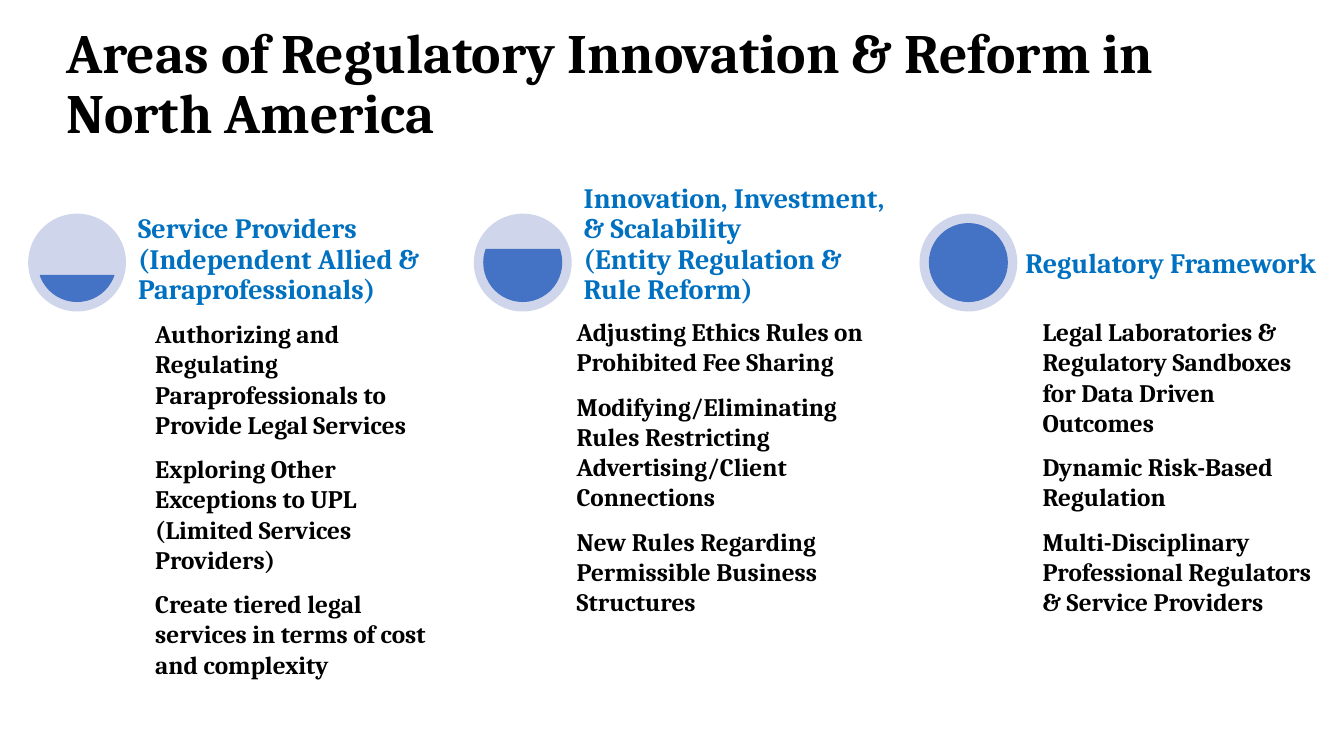
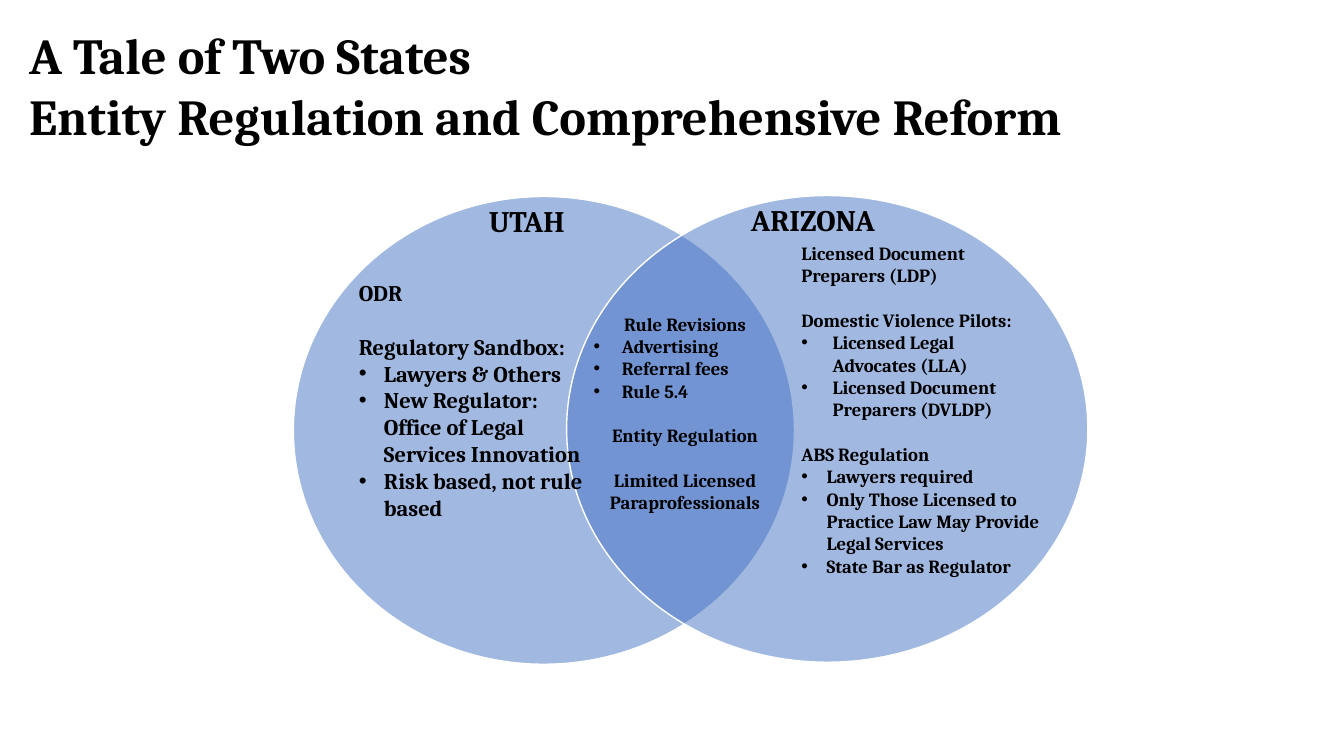
from copy import deepcopy
from dataclasses import dataclass
from math import asin, degrees

from pptx import Presentation
from pptx import util as u
from pptx.dml.color import RGBColor
from pptx.enum import shapes, text
from pptx.oxml.ns import qn
from lxml import etree

BLACK = RGBColor(0x00, 0x00, 0x00)
WHITE = RGBColor(0xFF, 0xFF, 0xFF)
BLUE = RGBColor(0x44, 0x72, 0xC4)
PALE_BLUE = RGBColor(0xCF, 0xD5, 0xEA)
HEADING_BLUE = RGBColor(0x00, 0x70, 0xC0)
FONT = "Cambria"
CENTER = text.PP_ALIGN.CENTER
BOTTOM = text.MSO_ANCHOR.BOTTOM
MIDDLE = text.MSO_ANCHOR.MIDDLE


@dataclass
class Item:
    """One paragraph: its words, bullet indent and paragraph format."""
    words: str
    indent: float = 0
    before: float = 0
    align: object = None


@dataclass
class Column:
    """One area of reform with its progress level and text placement."""
    heading: str
    points: list
    heading_offset: float
    body_offset: float
    body_top: float
    body_width: float
    heading_bottom: float = 0.06


COLUMNS = [
    Column("Service Providers\n(Independent Allied & Paraprofessionals)",
           ["Authorizing and Regulating Paraprofessionals to Provide Legal Services",
            "Exploring Other Exceptions to UPL (Limited Services Providers)",
            "Create tiered legal services in terms of cost and complexity"],
           1.03, 1.21, 3.11, 2.86),
    Column("Innovation, Investment, & Scalability\n(Entity Regulation & Rule Reform)",
           ["Adjusting Ethics Rules on Prohibited Fee Sharing",
            "Modifying/Eliminating Rules Restricting Advertising/Client Connections",
            "New Rules Regarding Permissible Business Structures"],
           1.03, 0.97, 3.09, 3.25),
    Column("Regulatory Framework",
           ["Legal Laboratories & Regulatory Sandboxes for Data Driven Outcomes",
            "Dynamic Risk-Based Regulation",
            "Multi-Disciplinary Professional Regulators & Service Providers"],
           0.99, 1.17, 3.09, 2.86, 0.39),
]

UTAH = [
    Item("ODR"),
    Item("Regulatory Sandbox:", before=19.2),
    Item("Lawyers & Others", 0.25),
    Item("New Regulator: \nOffice of Legal \nServices Innovation", 0.25),
    Item("Risk based, not rule based", 0.25),
]
ARIZONA = [
    Item("Licensed Document Preparers (LDP)"),
    Item("Domestic Violence Pilots:", before=16),
    Item("Licensed Legal Advocates (LLA)", 0.31),
    Item("Licensed Document Preparers (DVLDP)", 0.31),
    Item("ABS Regulation", before=16),
    Item("Lawyers required", 0.25),
    Item("Only Those Licensed to Practice Law May Provide Legal Services", 0.25),
    Item("State Bar as Regulator", 0.25),
]
SHARED = [
    Item("Rule Revisions", align=CENTER),
    Item("Advertising", 0.28),
    Item("Referral fees", 0.28),
    Item("Rule 5.4", 0.28),
    Item("Entity Regulation", before=16, align=CENTER),
    Item("Limited Licensed Paraprofessionals", before=16, align=CENTER),
]


def inches(box):
    """Turn a left, top, width, height box into lengths."""
    return [u.Inches(length) for length in box]


def add_bullet(paragraph, indent):
    """Give a paragraph a hanging round bullet."""
    properties = paragraph._p.get_or_add_pPr()
    properties.set("marL", str(u.Inches(indent)))
    properties.set("indent", str(-u.Inches(indent)))
    etree.SubElement(properties, qn("a:buFont")).set("typeface", "Arial")
    etree.SubElement(properties, qn("a:buChar")).set("char", "•")


def add_text(slide, box, items, size, color=BLACK, frame_format=None, **paragraph_format):
    """Place bold text in a box, one paragraph for each item."""
    frame = slide.shapes.add_textbox(*inches(box)).text_frame
    for name, value in {"word_wrap": True, **(frame_format or {})}.items():
        setattr(frame, name, value)
    for index, item in enumerate(items):
        paragraph = frame.paragraphs[0] if index == 0 else frame.add_paragraph()
        paragraph.text = item.words
        formats = {"alignment": item.align, **paragraph_format}
        if item.before:
            formats["space_before"] = u.Pt(item.before)
        for name, value in formats.items():
            setattr(paragraph, name, value)
        if item.indent:
            add_bullet(paragraph, item.indent)
        for run in paragraph.runs:
            for name, value in {"name": FONT, "size": u.Pt(size), "bold": True}.items():
                setattr(run.font, name, value)
            run.font.color.rgb = color
        for line_break in paragraph._p.findall(qn("a:br")):
            line_break.append(deepcopy(paragraph.runs[0]._r.rPr))


def margins(side, bottom=None):
    """Give the four text margins of a box."""
    values = dict.fromkeys(("margin_left", "margin_top", "margin_right"), u.Inches(side))
    return {**values, "margin_bottom": u.Inches(side if bottom is None else bottom)}


def add_filled(slide, kind, box, fill, line=None, alpha=None):
    """Place a preset shape with a solid fill, optional line and opacity."""
    shape = slide.shapes.add_shape(kind, *inches(box))
    shape.shadow.inherit = False
    shape.fill.solid()
    shape.fill.fore_color.rgb = fill
    if alpha:
        color = shape._element.spPr.find(qn("a:solidFill"))[0]
        etree.SubElement(color, qn("a:alpha")).set("val", str(alpha * 1000))
    if line is None:
        shape.line.fill.background()
    else:
        shape.line.color.rgb = line
        shape.line.width = u.Pt(1)
    return shape


def add_gauge(slide, left, top, size, level):
    """Draw a disc filled from the bottom up to a level from 0 to 1."""
    add_filled(slide, shapes.MSO_SHAPE.OVAL, (left, top, size, size), PALE_BLUE)
    inset = 0.1
    inner = size - 2 * inset
    chord = add_filled(slide, shapes.MSO_SHAPE.CHORD,
                       (left + inset, top + inset, inner, inner), BLUE, BLUE)
    angle = degrees(asin(1 - 2 * level))
    for index, end in enumerate((angle % 360, 180 - angle)):
        chord.adjustments[index] = end * 0.6


def add_column(slide, left, top, column, level):
    """Place one gauge with its heading and points."""
    size = 0.97
    add_gauge(slide, left, top, size, level)
    add_text(slide, (left + column.body_offset, column.body_top, column.body_width, 4.07),
             [Item(point) for point in column.points], 18,
             frame_format=margins(0.05), space_after=u.Pt(10))
    add_text(slide, (left + column.heading_offset, top, 3.23, size),
             [Item(column.heading)], 20, HEADING_BLUE,
             {"vertical_anchor": BOTTOM, **margins(0.06, column.heading_bottom)},
             line_spacing=0.9)


def build_areas(slide):
    """Build the slide of three areas of reform."""
    add_text(slide, (0.56, 0.26, 12.22, 1.18),
             [Item("Areas of Regulatory Innovation & Reform in North America")], 39.6,
             frame_format={"vertical_anchor": MIDDLE}, line_spacing=0.9)
    for index, column in enumerate(COLUMNS):
        add_column(slide, 0.28 + index * 4.42, 2.12, column, (index + 1) / len(COLUMNS))


def build_states(slide):
    """Build the slide that compares two states in a Venn diagram."""
    add_text(slide, (0.19, 0.19, 13.07, 1.31),
             [Item("A Tale of Two States\nEntity Regulation and Comprehensive Reform")], 36)
    for circle in ((2.91, 1.95, 4.97, 4.64), (5.62, 1.94, 5.17, 4.63)):
        add_filled(slide, shapes.MSO_SHAPE.OVAL, circle, BLUE, WHITE, 50)
    for box, items, size in (
        ((3.46, 2.72, 2.42, 3.71), UTAH, 16),
        ((7.85, 2.35, 2.56, 4.14), ARIZONA, 13.3),
        ((5.79, 3.05, 2.01, 2.39), SHARED, 13.3),
        ((4.75, 1.96, 1.38, 0.46), [Item("UTAH")], 21.3),
        ((7.35, 1.95, 2.11, 0.46), [Item("ARIZONA")], 21.3),
    ):
        add_text(slide, box, items, size)


def main():
    """Build and save the presentation."""
    presentation = Presentation()
    presentation.slide_width = u.Inches(13.33)
    presentation.slide_height = u.Inches(7.5)
    for build in (build_areas, build_states):
        build(presentation.slides.add_slide(presentation.slide_layouts[6]))
    presentation.save("out.pptx")


if __name__ == "__main__":
    main()
